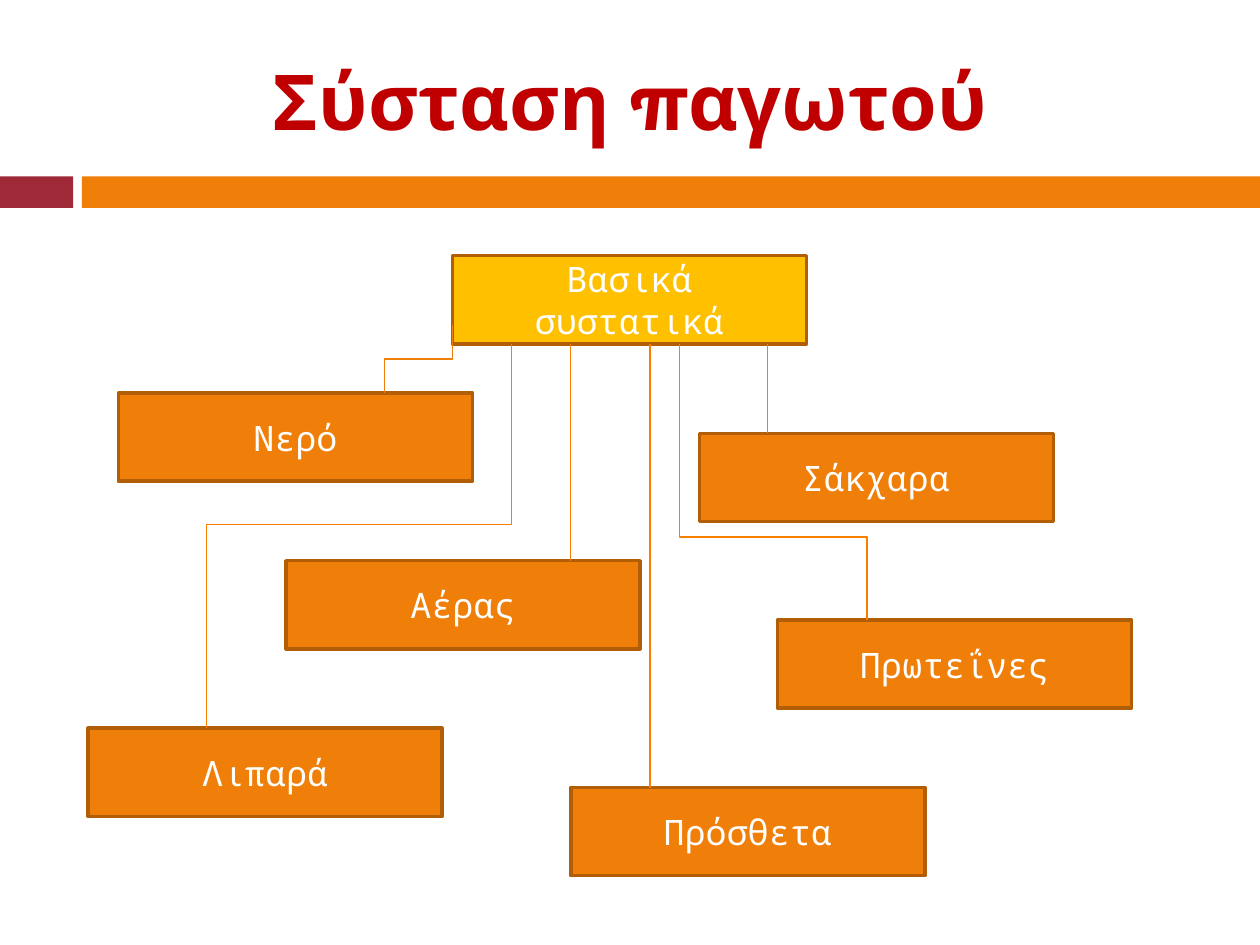
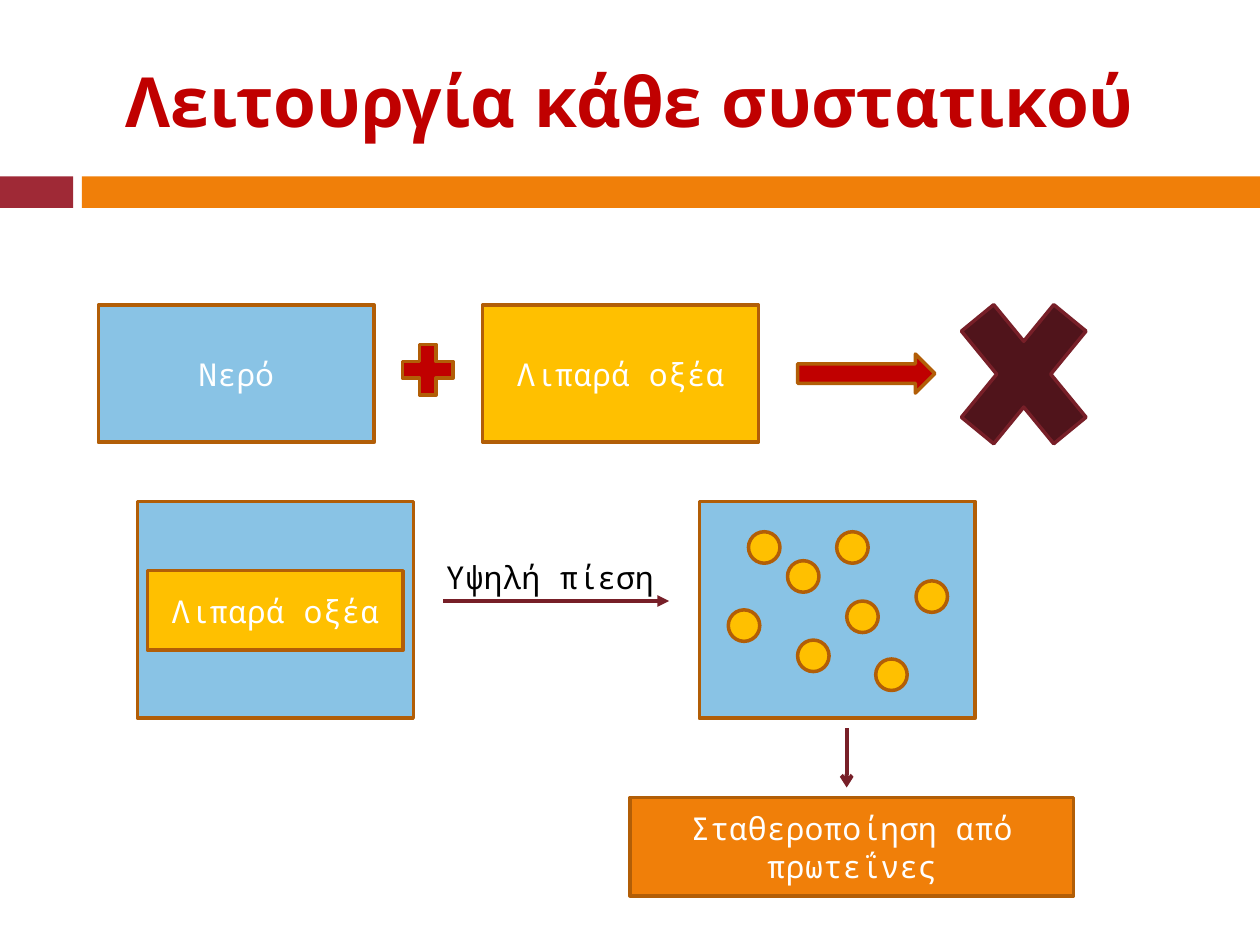
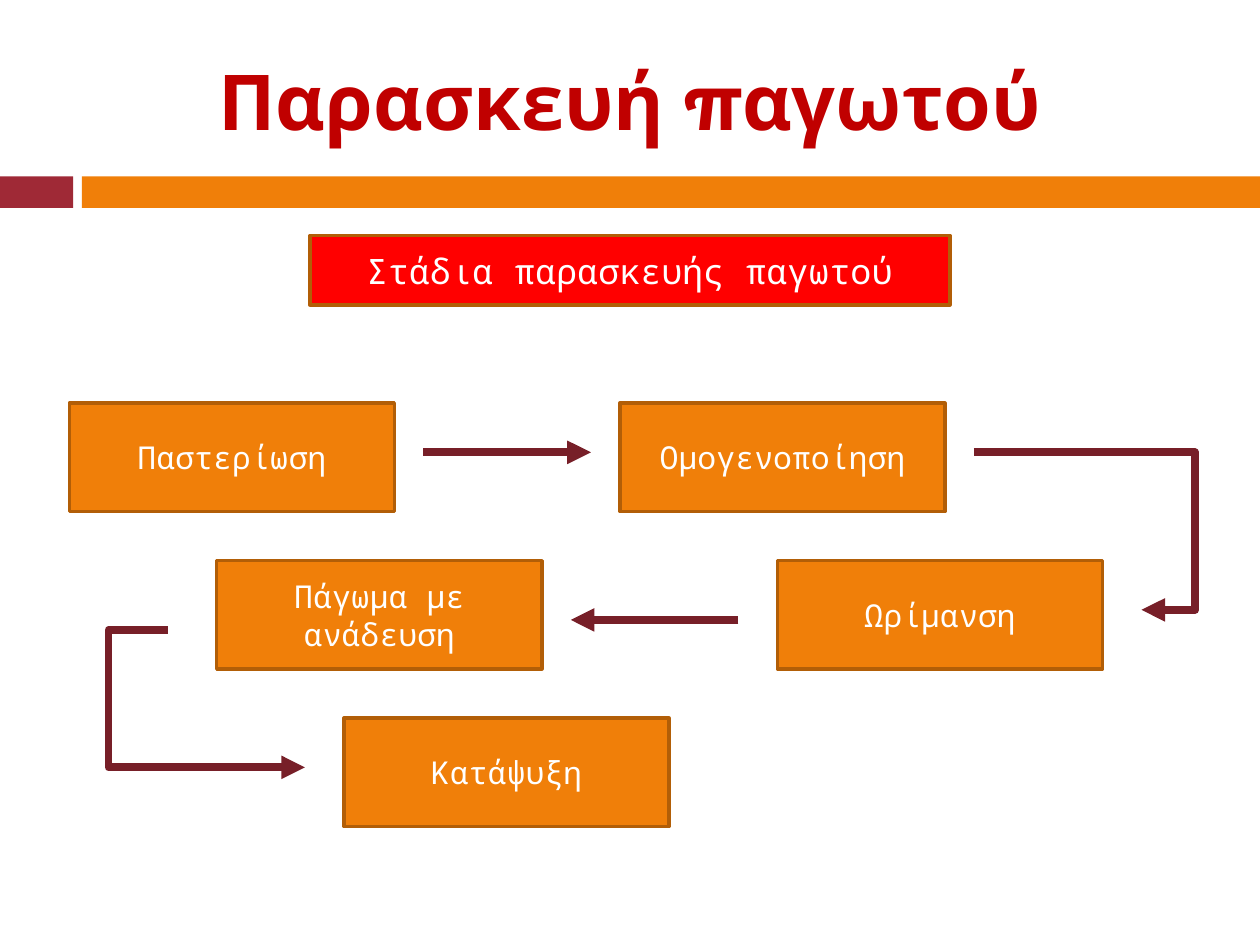
from lxml.etree import SubElement
from pptx import Presentation
from pptx.dml.color import RGBColor
from pptx.enum.shapes import MSO_CONNECTOR, MSO_SHAPE
from pptx.enum.text import MSO_ANCHOR, PP_ALIGN
from pptx.oxml.ns import qn
from pptx.util import Inches, Pt

RECTANGLE = MSO_SHAPE.RECTANGLE
OVAL = MSO_SHAPE.OVAL
PLUS = MSO_SHAPE.MATH_PLUS
CROSS = MSO_SHAPE.MATH_MULTIPLY
RIGHT_ARROW = MSO_SHAPE.RIGHT_ARROW
STRAIGHT = MSO_CONNECTOR.STRAIGHT
ELBOW = MSO_CONNECTOR.ELBOW
CENTER = PP_ALIGN.CENTER
LEFT = PP_ALIGN.LEFT
MIDDLE = MSO_ANCHOR.MIDDLE
TOP = MSO_ANCHOR.TOP

COLORS = {
    "orange": "F07F09",
    "branch": "F97F00",
    "outline": "B25E07",
    "crimson": "9F2936",
    "wine": "771F28",
    "dark wine": "50141B",
    "title": "C00000",
    "red": "FF0000",
    "yellow": "FFC000",
    "water": "89C3E5",
    "white": "FFFFFF",
    "black": "000000",
}
TITLE_FONT = "Montserrat"
BODY_FONT = "Noto Sans Mono"


def color(name):
    """Return the named palette colour."""
    return RGBColor.from_string(COLORS[name])


def write(box, text, size=18, font=BODY_FONT, ink="white", bold=False, align=CENTER, anchor=MIDDLE):
    """Put formatted text into a shape or text box."""
    frame = box.text_frame
    frame.word_wrap = True
    frame.vertical_anchor = anchor
    para = frame.paragraphs[0]
    para.alignment = align
    span = para.add_run()
    span.text = text
    span.font.size = Pt(size)
    span.font.name = font
    span.font.bold = bold
    span.font.color.rgb = color(ink)


def add_label(page, place, text, **style):
    """Add a text box."""
    box = page.shapes.add_textbox(*map(Inches, place))
    write(box, text, **style)


def add_figure(page, place, fill="orange", text="", kind=RECTANGLE, outline="outline", size=18):
    """Add a filled preset shape with an optional outline and text."""
    box = page.shapes.add_shape(kind, *map(Inches, place))
    box.shadow.inherit = False
    box.fill.solid()
    box.fill.fore_color.rgb = color(fill)
    if outline:
        box.line.color.rgb = color(outline)
        box.line.width = Pt(2)
    else:
        box.line.fill.background()
    if text:
        write(box, text, size=size)


def add_link(page, start, end, ink="wine", width=2.25, head=None, kind=STRAIGHT, bend=None):
    """Add a connector with an optional arrowhead and elbow position."""
    link = page.shapes.add_connector(kind, *map(Inches, (*start, *end)))
    link.line.color.rgb = color(ink)
    link.line.width = Pt(width)
    properties = link._element.spPr
    if head:
        SubElement(properties.find(qn("a:ln")), qn("a:tailEnd"), type=head)
    if bend is not None:
        guides = properties.find(qn("a:prstGeom")).find(qn("a:avLst"))
        SubElement(guides, qn("a:gd"), name="adj1", fmla=f"val {round(bend * 100000)}")
    SubElement(properties, qn("a:effectLst"))
    return link


def add_branch(page, start, end, bend=0.5, ink="branch"):
    """Add an elbow that leaves downwards, as a turned horizontal elbow."""
    (left, top), (right, bottom) = start, end
    middle_x, middle_y = (left + right) / 2, (top + bottom) / 2
    reach, rise = (bottom - top) / 2, abs(right - left) / 2
    side = -1 if right > left else 1
    link = add_link(
        page,
        (middle_x - side * reach, middle_y - rise),
        (middle_x + side * reach, middle_y + rise),
        ink=ink, width=0.75, kind=ELBOW, bend=bend,
    )
    angle = 90 if side == 1 else 270
    link._element.spPr.find(qn("a:xfrm")).set("rot", str(angle * 60000))


def add_page(deck, title, size=44):
    """Add a blank page with the two bands and its title."""
    page = deck.slides.add_slide(deck.slide_layouts[6])
    add_figure(page, (0, 1.4, 0.58, 0.25), "crimson", outline=None)
    add_figure(page, (0.65, 1.4, 9.35, 0.25), outline=None)
    add_label(page, (0.54, 0.25, 8.92, 1.08), title, size=size, font=TITLE_FONT, ink="title", bold=True)
    return page


def build_composition(deck):
    """Build the tree of basic ingredients."""
    page = add_page(deck, "Σύσταση παγωτού")
    ingredients = [
        ("Σάκχαρα", 5.55, 3.44),
        ("Νερό", 0.94, 3.12),
        ("Πρωτεΐνες", 6.17, 4.92),
        ("Αέρας", 2.27, 4.45),
        ("Λιπαρά", 0.7, 5.78),
        ("Πρόσθετα", 4.53, 6.25),
    ]
    add_figure(page, (3.59, 2.03, 2.81, 0.7), "yellow", "Βασικά συστατικά", size=20)
    for name, left, top in ingredients:
        add_figure(page, (left, top, 2.81, 0.7), text=name, size=20)
    add_branch(page, (3.59, 2.58), (3.05, 3.12), ink="orange")
    for left, right, bottom, bend in [
        (4.53, 4.53, 4.45, 0.5),
        (6.09, 6.09, 3.44, 0.5),
        (5.39, 6.88, 4.92, 0.7),
        (5.16, 5.16, 6.25, 0.5),
        (4.06, 1.64, 5.78, 0.47),
    ]:
        add_branch(page, (left, 2.73), (right, bottom), bend)


def build_function(deck):
    """Build the emulsion diagram of water and fatty acids."""
    page = add_page(deck, "Λειτουργία κάθε συστατικού", size=39.6)
    for left in (1.09, 5.55):
        add_figure(page, (left, 3.98, 2.19, 1.72), "water")
    add_figure(page, (0.78, 2.42, 2.19, 1.09), "water", "Νερό")
    add_figure(page, (3.12, 2.66, 0.55, 0.55), "title", kind=PLUS)
    add_figure(page, (7.42, 2.11, 1.41, 1.72), "dark wine", kind=CROSS, outline="wine")
    add_figure(page, (6.33, 2.81, 1.09, 0.31), "title", kind=RIGHT_ARROW)
    for place in [(3.83, 2.42, 2.19, 1.09), (1.17, 4.53, 2.03, 0.63)]:
        add_figure(page, place, "yellow", "Λιπαρά οξέα")
    add_link(page, (3.52, 4.77), (5.31, 4.77), head="triangle")
    add_label(page, (3.44, 4.38, 1.88, 0.4), "Υψηλή πίεση", ink="black", align=LEFT, anchor=TOP)
    droplets = [
        (5.94, 4.22), (6.33, 5.08), (5.78, 4.84), (6.72, 4.77),
        (6.95, 5.23), (7.27, 4.61), (6.64, 4.22), (6.25, 4.45),
    ]
    for left, top in droplets:
        add_figure(page, (left, top, 0.25, 0.25), "yellow", kind=OVAL)
    add_figure(page, (5, 6.33, 3.52, 0.78), text="Σταθεροποίηση από πρωτεΐνες")
    add_link(page, (6.72, 5.78), (6.72, 6.25), head="arrow")


def build_production(deck):
    """Build the chain of production stages."""
    page = add_page(deck, "Παρασκευή παγωτού")
    add_figure(page, (2.46, 1.87, 5.08, 0.55), "red", "Στάδια παρασκευής παγωτού", size=20)
    stages = [
        ("Παστερίωση", 0.55, 0),
        ("Ομογενοποίηση", 4.92, 0),
        ("Ωρίμανση", 6.17, 1),
        ("Πάγωμα με ανάδευση", 1.72, 1),
        ("Κατάψυξη", 2.73, 2),
    ]
    for name, left, row in stages:
        add_figure(page, (left, 3.2 + 1.25 * row, 2.58, 0.86), text=name)
    arrow = {"width": 4.5, "head": "triangle"}
    add_link(page, (3.36, 3.59), (4.69, 3.59), **arrow)
    add_link(page, (5.86, 4.92), (4.53, 4.92), **arrow)
    add_link(page, (7.73, 3.59), (9.06, 4.84), kind=ELBOW, bend=1.32, **arrow)
    add_link(page, (1.33, 5), (2.42, 6.09), kind=ELBOW, bend=-0.43, **arrow)


def main():
    """Build the deck and save it."""
    deck = Presentation()
    deck.slide_width = Inches(10)
    deck.slide_height = Inches(7.5)
    build_composition(deck)
    build_function(deck)
    build_production(deck)
    deck.save("out.pptx")


if __name__ == "__main__":
    main()
